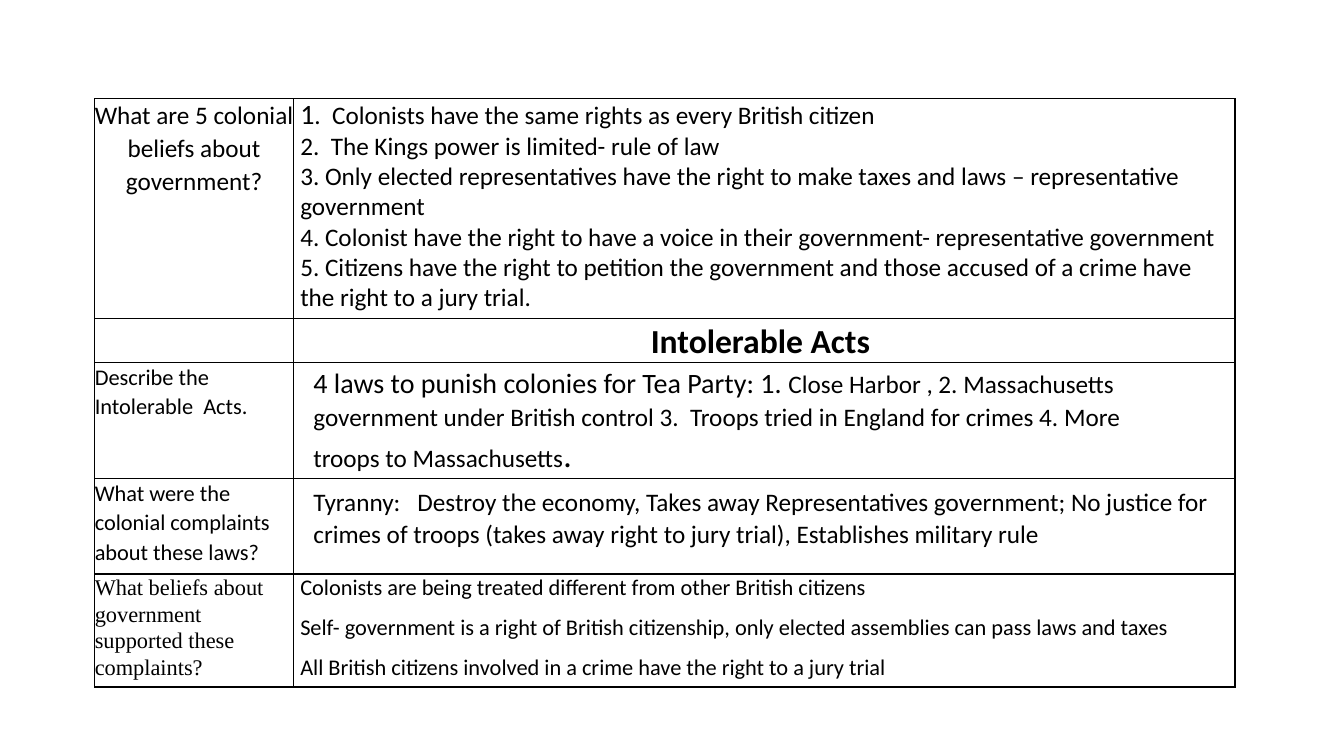
from dataclasses import dataclass

from lxml.etree import SubElement
from pptx import Presentation
from pptx.dml.color import RGBColor
from pptx.enum.text import MSO_AUTO_SIZE as AutoSize, PP_ALIGN as Align
from pptx.oxml.ns import qn
from pptx.util import Inches, Pt

COLORS = {"text": "000000", "border": "000000"}
BODY_FONT = "Calibri"
BORDER_POINTS = 1
LOOSE = 1.07


@dataclass
class Run:
    text: str
    size: float = 18
    bold: bool = False
    font: str = BODY_FONT


@dataclass
class Cell:
    row: int
    column: int
    run: Run
    align: Align = Align.LEFT


@dataclass
class Answer:
    left: float
    top: float
    width: float
    height: float
    paragraphs: list[list[Run]]
    spacing: float = LOOSE
    space_after: float = 8


COLUMN_WIDTHS = [1.97, 9.34]
ROW_HEIGHTS = [2.18, 0.39, 1.15, 0.95, 1.12]

CELLS = [
    Cell(0, 0, Run("What are 5 colonial beliefs about government?"), Align.CENTER),
    Cell(1, 1, Run("Intolerable Acts ", 24, True), Align.CENTER),
    Cell(2, 0, Run("Describe the Intolerable  Acts.\u00a0", 16)),
    Cell(3, 0, Run("What were the colonial complaints about these laws?", 16)),
    Cell(4, 0, Run("What beliefs about government supported these complaints?",
                   16, font="Times New Roman")),
]

ANSWERS = [
    Answer(2.88, 0.91, 9.36, 2.26, [
        [Run("1", 20),
         Run(".  Colonists have the same rights as every British citizen")],
        [Run("2.  The Kings power is limited- rule of law")],
        [Run("3. Only elected representatives have the right to make taxes and laws "
             "– representative government")],
        [Run("4. Colonist have the right to have a voice in their government- "
             "representative government")],
        [Run("5. Citizens have the right to petition the government and those "
             "accused of a crime have the right to a jury trial.")],
    ], spacing=1, space_after=0),
    Answer(3.01, 3.55, 8.84, 1.2, [
        [Run("4 laws to punish colonies for Tea Party: 1. ", 20),
         Run("Close Harbor , 2. Massachusetts government under British control "
             "3.  Troops tried in England for crimes 4. More troops to Massachusetts"),
         Run(".", 24)],
    ]),
    Answer(3.01, 4.75, 9.39, 0.74, [
        [Run("Tyranny:   Destroy the economy, Takes away Representatives government; "
             "No justice for crimes of troops (takes away right to jury trial), "
             "Establishes military rule")],
    ]),
    Answer(2.88, 5.62, 9.94, 1.18, [
        [Run("Colonists are being treated different from other British citizens", 16)],
        [Run("Self- government is a right of British citizenship, only elected "
             "assemblies can pass laws and taxes", 16)],
        [Run("All British citizens involved in a crime have the right to a jury trial",
             16)],
    ]),
]


def write_runs(paragraph, runs: list[Run], spacing: float) -> None:
    paragraph.line_spacing = spacing
    for item in runs:
        run = paragraph.add_run()
        run.text = item.text
        run.font.name = item.font
        run.font.size = Pt(item.size)
        run.font.bold = item.bold
        run.font.color.rgb = RGBColor.from_string(COLORS["text"])


def add_borders(cell) -> None:
    properties = cell._tc.get_or_add_tcPr()
    for index, side in enumerate(("lnL", "lnR", "lnT", "lnB")):
        line = SubElement(properties, qn(f"a:{side}"), w=str(Pt(BORDER_POINTS)))
        fill = SubElement(line, qn("a:solidFill"))
        SubElement(fill, qn("a:srgbClr"), val=COLORS["border"])
        properties.insert(index, line)


def add_question_table(slide) -> None:
    table = slide.shapes.add_table(
        len(ROW_HEIGHTS), len(COLUMN_WIDTHS), Inches(0.94), Inches(0.98),
        Inches(sum(COLUMN_WIDTHS)), Inches(sum(ROW_HEIGHTS))).table
    table.first_row = table.horz_banding = False
    for column, width in zip(table.columns, COLUMN_WIDTHS):
        column.width = Inches(width)
    for row, height in zip(table.rows, ROW_HEIGHTS):
        row.height = Inches(height)
    for cell in table.iter_cells():
        cell.margin_left = cell.margin_right = Inches(0)
        cell.margin_top = cell.margin_bottom = Inches(0)
        cell.fill.background()
        add_borders(cell)
    for item in CELLS:
        paragraph = table.cell(item.row, item.column).text_frame.paragraphs[0]
        paragraph.alignment = item.align
        write_runs(paragraph, [item.run], LOOSE)


def add_answer(slide, answer: Answer) -> None:
    shape = slide.shapes.add_textbox(Inches(answer.left), Inches(answer.top),
                                     Inches(answer.width), Inches(answer.height))
    frame = shape.text_frame
    frame.word_wrap = True
    frame.auto_size = AutoSize.SHAPE_TO_FIT_TEXT
    for index, runs in enumerate(answer.paragraphs):
        paragraph = frame.add_paragraph() if index else frame.paragraphs[0]
        paragraph.space_after = Pt(answer.space_after)
        write_runs(paragraph, runs, answer.spacing)


def main() -> None:
    presentation = Presentation()
    presentation.slide_width = Inches(13.33)
    presentation.slide_height = Inches(7.5)
    slide = presentation.slides.add_slide(presentation.slide_layouts[6])

    # Grid with the questions
    add_question_table(slide)

    # Answers laid over the right column
    for answer in ANSWERS:
        add_answer(slide, answer)

    presentation.save("out.pptx")


if __name__ == "__main__":
    main()
